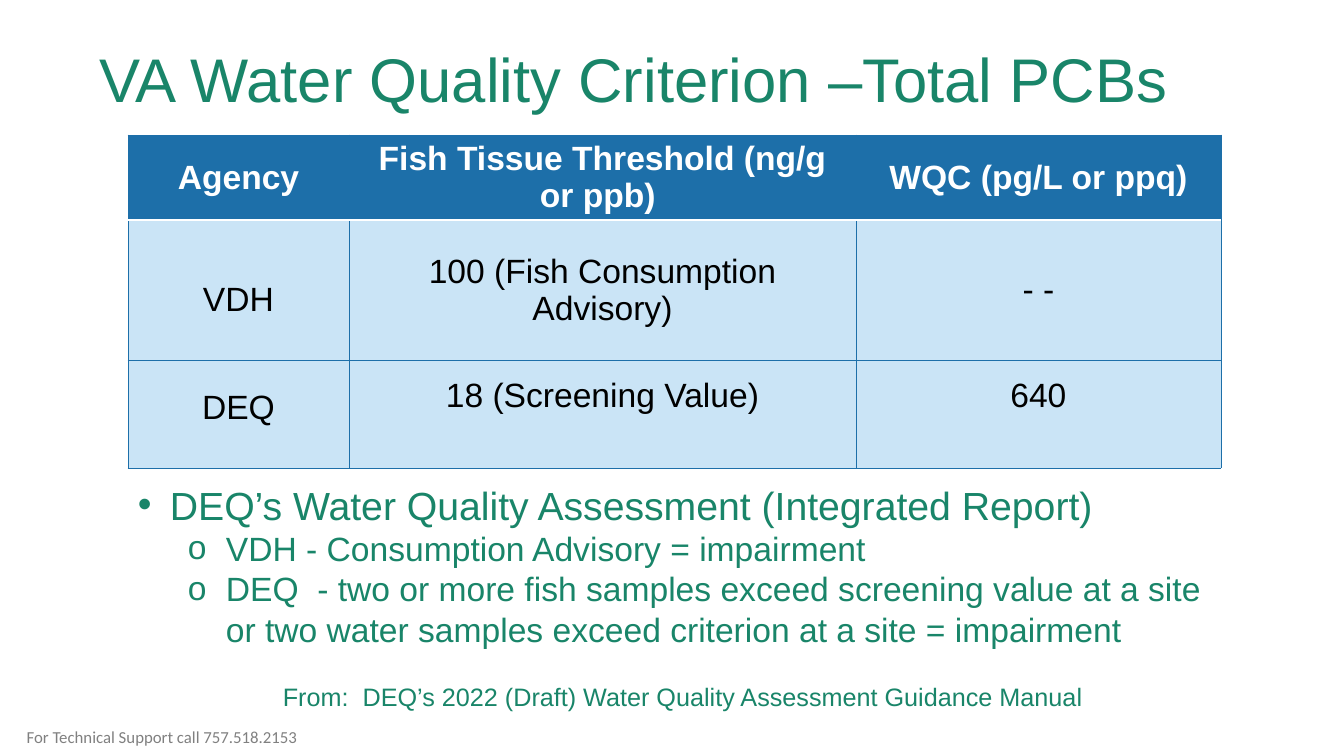
from lxml.etree import SubElement
from pptx import Presentation
from pptx.dml.color import RGBColor
from pptx.enum.text import MSO_ANCHOR as Anchor, PP_ALIGN as Align
from pptx.oxml.ns import qn
from pptx.util import Pt

PX = 9071  # EMU in one px, 100.8 px to the inch
GREEN = RGBColor(0x19, 0x85, 0x69)
BLUE = RGBColor(0x1D, 0x6F, 0xA9)
PALE = RGBColor(0xCA, 0xE4, 0xF6)
WHITE = RGBColor(0xFF, 0xFF, 0xFF)
BLACK = RGBColor(0x00, 0x00, 0x00)
GRAY = RGBColor(0x80, 0x80, 0x80)


def style(par, size, color, name="Arial", bold=False):
    font = par.font
    for key, value in dict(size=Pt(size), name=name, bold=bold).items():
        setattr(font, key, value)
    font.color.rgb = color


def add_box(left, top, width, height, anchor=Anchor.TOP):
    box = slide.shapes.add_textbox(*(n * PX for n in (left, top, width, height)))
    frame = box.text_frame
    frame.word_wrap = True
    frame.vertical_anchor = anchor
    return frame


deck = Presentation()
deck.slide_width, deck.slide_height = 1344 * PX, 756 * PX
slide = deck.slides.add_slide(deck.slide_layouts[6])

# Criteria table
rows = [
    ["Agency", "Fish Tissue Threshold (ng/g or ppb) ", "WQC (pg/L or ppq)"],
    ["VDH", "100 (Fish Consumption Advisory)", "- -"],
    ["DEQ", "18 (Screening Value)", "640"],
]
widths, heights = [221, 507, 365], [85, 140, 108]
table = slide.shapes.add_table(
    3, 3, 128 * PX, 135 * PX, sum(widths) * PX, sum(heights) * PX).table
for col, width in zip(table.columns, widths):
    col.width = width * PX
for row, height in zip(table.rows, heights):
    row.height = height * PX

for r, texts in enumerate(rows):
    for c, text in enumerate(texts):
        cell = table.cell(r, c)
        head = r == 0
        cell.text = text
        cell.fill.solid()
        cell.fill.fore_color.rgb = BLUE if head else PALE
        cell.vertical_anchor = Anchor.MIDDLE if head or c else Anchor.BOTTOM
        if r == 2 or (r == 1 and c == 0):
            cell.margin_bottom = 41 * PX
        par = cell.text_frame.paragraphs[0]
        par.alignment = Align.CENTER
        style(par, 24, WHITE if head else BLACK, bold=head)

        # Cell borders, with a white rule under the header
        props = cell._tc.get_or_add_tcPr()
        for i, side in enumerate(["lnL", "lnR", "lnT", "lnB"]):
            white = (r, side) in [(0, "lnB"), (1, "lnT")]
            line = SubElement(props, qn(f"a:{side}"), w=str(Pt(1 if white else 0.5)))
            paint = SubElement(line, qn("a:solidFill"))
            SubElement(paint, qn("a:srgbClr"), val=str(WHITE if white else BLUE))
            props.insert(i, line)

# Assessment bullets
points = [
    (0, "DEQ’s Water Quality Assessment (Integrated Report)"),
    (1, "VDH - Consumption Advisory = impairment"),
    (1, "DEQ  - two or more fish samples exceed screening value at a site "
        "or two water samples exceed criterion at a site = impairment"),
]
levels = [(28, 32, "•"), (24, 38, "o")]
frame = add_box(128, 476, 1093, 179)
for i, (level, text) in enumerate(points):
    par = frame.paragraphs[0] if i == 0 else frame.add_paragraph()
    par.text, par.level = text, level
    size, hang, mark = levels[level]
    props = par._p.get_or_add_pPr()
    props.set("marL", str((88 if level else hang) * PX))
    props.set("indent", str(-hang * PX))
    SubElement(props, qn("a:buFont"), typeface="Arial")
    SubElement(props, qn("a:buChar"), char=mark)
    style(par, size, GREEN)

# Source line
par = add_box(223, 676, 874, 40).paragraphs[0]
par.text = "From:  DEQ’s 2022 (Draft) Water Quality Assessment Guidance Manual"
par._p.get_or_add_pPr().set("marL", str(50 * PX))
style(par, 18, GREEN)

# Title and support line
lines = [
    ((-38, 20, 1344, 126), "VA Water Quality Criterion –Total PCBs", 44, GREEN, "Arial"),
    ((-29, 712, 382, 50), "For Technical Support call 757.518.2153", 12, GRAY, "Calibri"),
]
for place, text, size, color, name in lines:
    par = add_box(*place, Anchor.MIDDLE).paragraphs[0]
    par.text = text
    par.alignment = Align.CENTER
    par.line_spacing = 0.9 if size == 44 else 1.0
    style(par, size, color, name)

deck.save("out.pptx")
